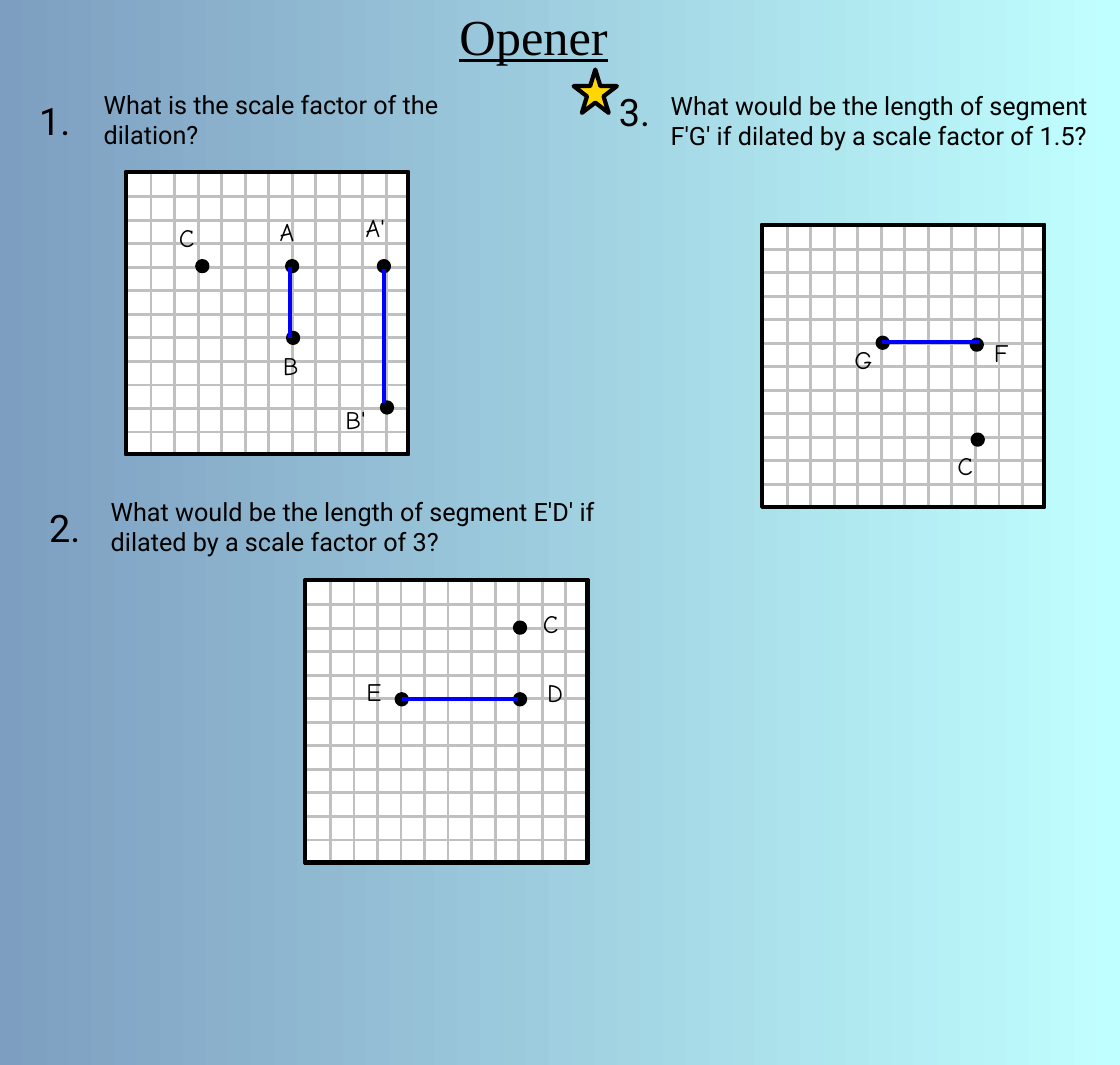
from lxml import etree
from pptx import Presentation
from pptx.dml.color import RGBColor
from pptx.enum.shapes import MSO_CONNECTOR, MSO_SHAPE
from pptx.enum.text import MSO_AUTO_SIZE
from pptx.oxml.ns import qn
from pptx.util import Pt

STRAIGHT = MSO_CONNECTOR.STRAIGHT
RECT, OVAL, STAR = MSO_SHAPE.RECTANGLE, MSO_SHAPE.OVAL, MSO_SHAPE.STAR_5_POINT
GROW = MSO_AUTO_SIZE.SHAPE_TO_FIT_TEXT
COLORS = {
    "left": "7D9EC0", "right": "C0FFFF", "black": "000000", "white": "FFFFFF",
    "grid": "C0C0C0", "segment": "0000FF", "star": "FFD700",
}
RGB = {name: RGBColor.from_string(value) for name, value in COLORS.items()}

prs = Presentation()
prs.slide_width, prs.slide_height = Pt(800), Pt(761)
COL, ROW = prs.slide_width / 100, prs.slide_height / 100
CELLS = 12
CELL = 2.1 * COL
MARGIN_X, MARGIN_Y = 0.14 * COL, 0.09 * COL
SIDE = CELLS * CELL
DOT = 0.9 * COL

s = prs.slides.add_slide(prs.slide_layouts[6])
fill = s.background.fill
fill.gradient()
fill.gradient_angle = 0
for stop, name, position in zip(fill.gradient_stops, ("left", "right"), (0, 1)):
    stop.color.rgb = RGB[name]
    stop.position = position


def add_item(shapes, kind, box, color=None, text=None, size=18, font="Roboto"):
    box = [round(v) for v in box]
    if text:
        sp = shapes.add_textbox(*box)
        tf = sp.text_frame
        tf.word_wrap = True
        tf.auto_size = GROW
        p = tf.paragraphs[0]
        p.text = text
        p.font.size, p.font.name = Pt(size), font
        p.font.color.rgb = RGB["black"]
        return p
    sp = shapes.add_shape(kind, *box)
    sp.shadow.inherit = False
    if color:
        sp.fill.solid()
        sp.fill.fore_color.rgb = RGB[color]
    else:
        sp.fill.background()
    sp.line.color.rgb = RGB["black"]
    sp.line.width = Pt(3)
    return sp


def add_line(shapes, ends, color, width):
    line = shapes.add_connector(STRAIGHT, *[round(v) for v in ends])
    line.line.color.rgb = RGB[color]
    line.line.width = Pt(width)
    etree.SubElement(line._element.spPr, qn("a:effectLst"))


boards = [
    {
        "corner": (68.05, 21.1),
        "dots": [(5.06, 4.98), (9.06, 5.06), (9.1, 9.1)],
        "labels": [("C", 7.81, 9.36), ("F", 9.36, 4.55), ("G", 3.43, 4.85)],
        "segments": [(5.02, 4.94, 9.14, 4.94)],
    },
    {
        "corner": (27.27, 54.49),
        "dots": [(9.06, 1.97), (4.03, 5.02), (9.06, 5.02)],
        "labels": [("C", 9.61, 0.94), ("D", 9.79, 3.86), ("E", 2.1, 3.82)],
        "segments": [(4.03, 5.02, 8.97, 5.02)],
    },
    {
        "corner": (11.25, 16.18),
        "dots": [(3.18, 3.95), (7, 3.95), (7.04, 7), (10.9, 3.95), (11.03, 9.96)],
        "labels": [("C", 1.76, 1.89), ("A", 6.05, 1.63), ("B", 6.18, 7.3),
                   ("A'", 9.7, 1.46), ("B'", 8.84, 9.61)],
        "segments": [(6.91, 3.99, 6.91, 7), (10.9, 4.08, 10.9, 9.79)],
    },
]

for board in boards:
    left, top = board["corner"][0] * COL, board["corner"][1] * ROW
    x0, y0 = left + MARGIN_X, top + MARGIN_Y
    shapes = s.shapes.add_group_shape().shapes
    add_item(shapes, RECT, (left, top, SIDE, SIDE), "white")
    for i in range(1, CELLS):
        x, y = x0 + i * CELL, y0 + i * CELL
        add_line(shapes, (x, top, x, top + SIDE), "grid", 2)
        add_line(shapes, (left, y, left + SIDE, y), "grid", 2)
    add_item(shapes, RECT, (left, top, SIDE, SIDE))
    for x, y in board["dots"]:
        add_item(shapes, OVAL, (x0 + x * CELL - DOT / 2, y0 + y * CELL - DOT / 2, DOT, DOT), "black")
    for text, x, y in board["labels"]:
        width = (1 + len(text)) * 0.8 * CELL
        add_item(shapes, None, (x0 + x * CELL, y0 + y * CELL, width, 1.7 * CELL),
                 text=text, font="Comic Neue")
    for x1, y1, x2, y2 in board["segments"]:
        add_line(s.shapes, (x0 + x1 * CELL, y0 + y1 * CELL, x0 + x2 * CELL, y0 + y2 * CELL),
                 "segment", 3)

title = add_item(s.shapes, None, (40.14 * COL, 0, 25.47 * COL, 6.72 * ROW),
                 text="Opener", size=36, font="Times New Roman")
title.font.underline = True

questions = [
    ("1.", 2.61, 8.7, 5.04, 5.3, 27),
    ("2.", 3.51, 46.88, 5.04, 5.3, 27),
    ("3.", 54.37, 7.85, 5.04, 5.3, 27),
    ("What is the scale factor of the dilation?", 8.37, 7.88, 34.29, 6.72, 18),
    ("What would be the length of segment E'D' if dilated by a scale factor of 3?",
     9, 46.13, 47.52, 6.72, 18),
    ("What would be the length of segment F'G' if dilated by a scale factor of 1.5?",
     59, 8, 40.5, 6.72, 18),
]
for text, x, y, w, h, size in questions:
    add_item(s.shapes, None, (x * COL, y * ROW, w * COL, h * ROW), text=text, size=size)

add_item(s.shapes, STAR, (51.22 * COL, 6.53 * ROW, 3.87 * COL, 4.07 * ROW), "star")

prs.save("out.pptx")
